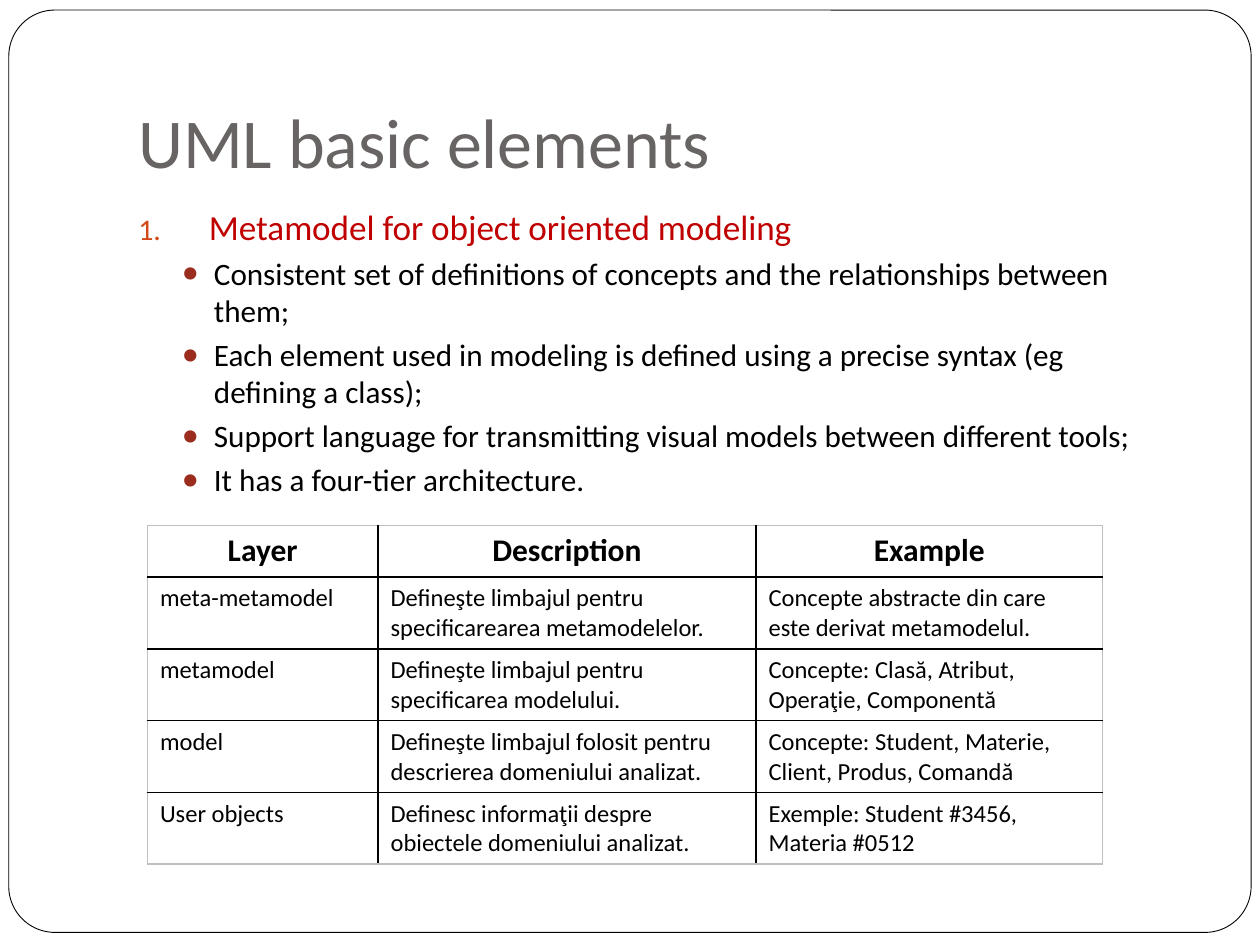
import pptx
import pptx.util
import pptx.dml.color
import pptx.enum.shapes
import pptx.enum.text
import pptx.oxml.ns
import lxml.etree
from dataclasses import dataclass
from pptx.util import Inches


@dataclass(frozen=True)
class Theme:
    font: str = "Calibri"
    ink: str = "000000"
    paper: str = "FFFFFF"
    title: str = "696464"
    head: str = "C00000"
    num: str = "D34817"
    dot: str = "9B2D1F"
    edge: str = "BFBFBF"
    title_pt: float = 40
    head_pt: float = 20.1
    item_pt: float = 17.8
    top_pt: float = 18
    cell_pt: float = 14


theme = Theme()
align = pptx.enum.text.PP_ALIGN
color = pptx.dml.color.RGBColor.from_string


def add_tag(parent, tag, **attrs):
    """Append a drawing element with the given attributes."""
    node = lxml.etree.SubElement(parent, pptx.oxml.ns.qn("a:" + tag))
    for key, value in attrs.items():
        node.set(key, str(value))
    return node


def put_text(frame, text, size, ink=theme.ink, bold=False, side=align.LEFT,
             before=0, left=0, hang=0, level=0, mark=None, tint=None):
    """Fill the first empty paragraph, or add one, and format it."""
    para = frame.paragraphs[0] if not frame.text else frame.add_paragraph()
    para.alignment, para.level = side, level
    para.space_before = pptx.util.Pt(before)
    run = para.add_run()
    run.text = text
    run.font.name, run.font.size, run.font.bold = theme.font, pptx.util.Pt(size), bold
    run.font.color.rgb = color(ink)
    if mark:
        props = para._p.get_or_add_pPr()
        props.set("marL", str(Inches(left)))
        props.set("indent", str(-Inches(hang)))
        add_tag(add_tag(props, "buClr"), "srgbClr", val=tint)
        add_tag(props, "buSzPct", val=85000)
        add_tag(props, "buFont", typeface=theme.font)
        if mark == "1.":
            add_tag(props, "buAutoNum", type="arabicPeriod")
        else:
            add_tag(props, "buChar", char=mark)


deck = pptx.Presentation()
deck.slide_width, deck.slide_height = Inches(10), Inches(7.5)
slide = deck.slides.add_slide(deck.slide_layouts[6])

# Rounded frame
panel = slide.shapes.add_shape(
    pptx.enum.shapes.MSO_SHAPE.ROUNDED_RECTANGLE,
    Inches(0.07), Inches(0.08), Inches(9.86), Inches(7.32))
panel.adjustments[0] = 0.05
panel.shadow.inherit = False
panel.fill.solid()
panel.fill.fore_color.rgb = color(theme.paper)
panel.line.color.rgb = color(theme.ink)
panel.line.width = pptx.util.Pt(0.5)

# Title
box = slide.shapes.add_textbox(Inches(1), Inches(0.3), Inches(8.5), Inches(1.25))
title = box.text_frame
title.word_wrap = True
title.vertical_anchor = pptx.enum.text.MSO_ANCHOR.BOTTOM
title.margin_bottom = Inches(0.1)
put_text(title, "UML basic elements", theme.title_pt, ink=theme.title)

# Numbered heading and its points
box = slide.shapes.add_textbox(Inches(1), Inches(1.58), Inches(8.17), Inches(2.42))
body = box.text_frame
body.word_wrap = True
put_text(body, "Metamodel for object oriented modeling", theme.head_pt, ink=theme.head,
         before=5.8, left=0.56, hang=0.56, mark="1.", tint=theme.num)
points = [
    "Consistent set of definitions of concepts and the relationships between them;",
    "Each element used in modeling is defined using a precise syntax (eg defining a class);",
    "Support language for transmitting visual models between different tools;",
    "It has a four-tier architecture.",
]
for point in points:
    put_text(body, point, theme.item_pt, before=3.7, left=0.6, hang=0.25,
             level=1, mark="●", tint=theme.dot)

# Table of layers
rows = [
    ("Layer", "Description", "Example"),
    ("meta-metamodel", "Defineşte limbajul pentru specificarearea metamodelelor.",
     "Concepte abstracte din care este derivat metamodelul."),
    ("metamodel", "Defineşte limbajul pentru specificarea modelului.",
     "Concepte: Clasă, Atribut, Operaţie, Componentă"),
    ("model", "Defineşte limbajul folosit pentru descrierea domeniului analizat.",
     "Concepte: Student, Materie, Client, Produs, Comandă"),
    ("User objects", "Definesc informaţii despre obiectele domeniului analizat.",
     "Exemple: Student #3456, Materia #0512"),
]
widths = [1.83, 3, 2.75]
grid = slide.shapes.add_table(len(rows), len(widths), Inches(1.17), Inches(4.17),
                              Inches(sum(widths)), Inches(2.7)).table
grid.first_row = grid.horz_banding = False
for col, width in zip(grid.columns, widths):
    col.width = Inches(width)
for r, row in enumerate(rows):
    grid.rows[r].height = Inches(0.57 if r else 0.41)
    for c, text in enumerate(row):
        cell = grid.cell(r, c)
        put_text(cell.text_frame, text, theme.cell_pt if r else theme.top_pt,
                 bold=r == 0, side=align.LEFT if r else align.CENTER)
        # Grey on the outside, black between cells
        props = cell._tc.get_or_add_tcPr()
        outer = {"lnL": c == 0, "lnR": c == len(widths) - 1,
                 "lnT": r == 0, "lnB": r == len(rows) - 1}
        for side, rim in outer.items():
            line = add_tag(props, side, w=pptx.util.Pt(1))
            add_tag(add_tag(line, "solidFill"), "srgbClr",
                    val=theme.edge if rim else theme.ink)
        add_tag(props, "noFill")

deck.save("out.pptx")
